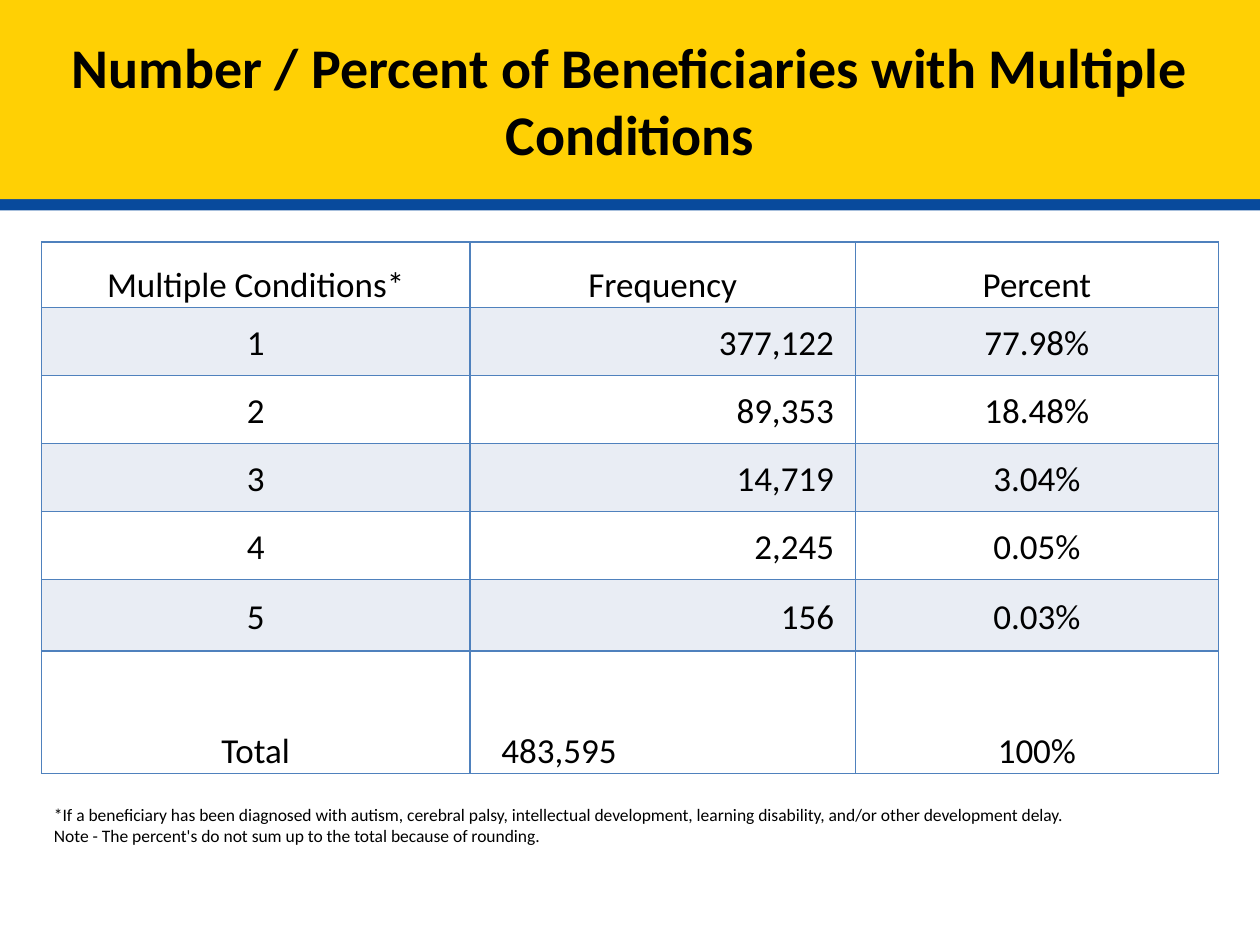
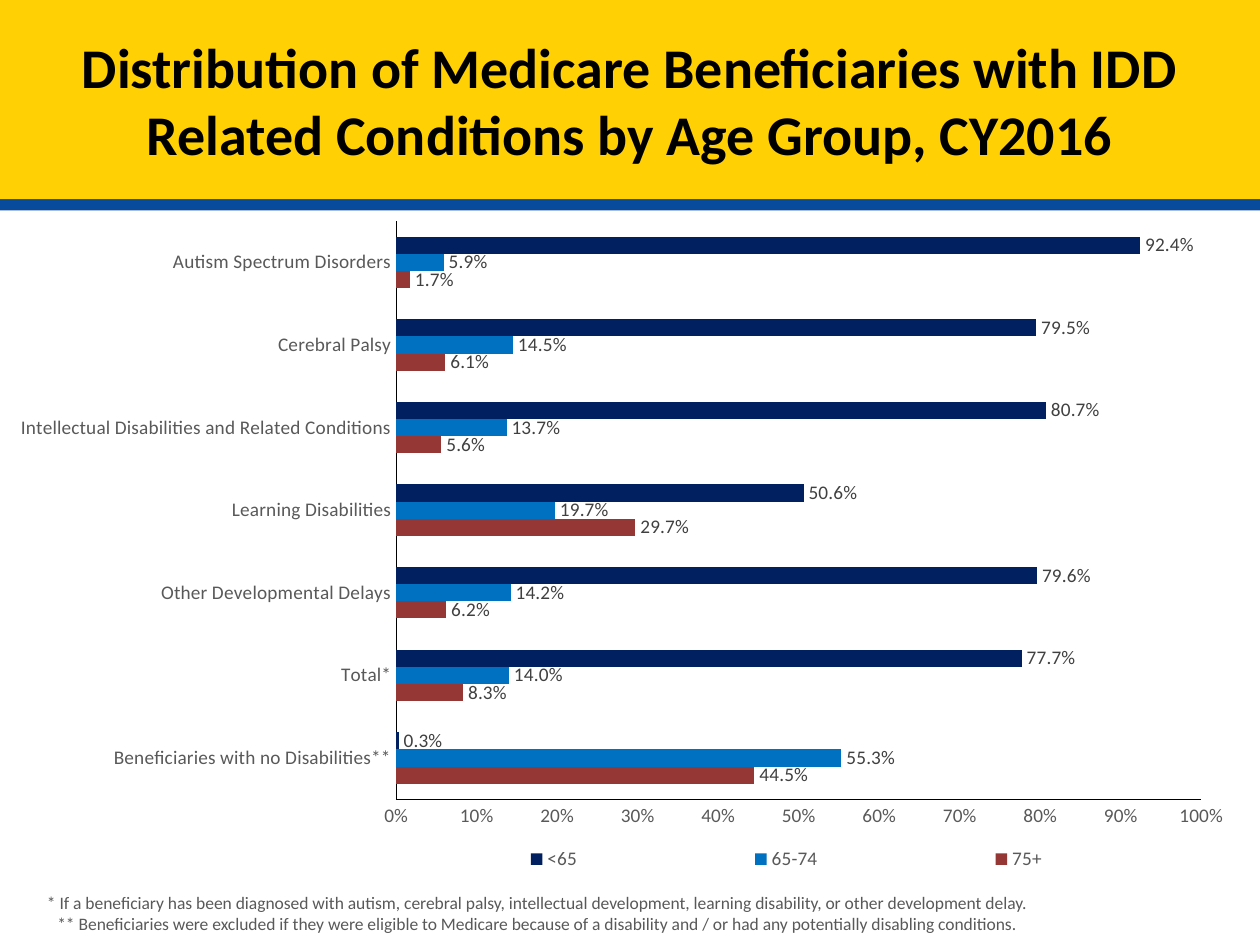
import pptx
import pptx.chart.data
import pptx.dml.color
import pptx.enum.chart
import pptx.enum.shapes
import pptx.enum.text
import pptx.oxml
import pptx.oxml.ns
import pptx.util

Inches, Pt = pptx.util.Inches, pptx.util.Pt
RGBColor = pptx.dml.color.RGBColor
PP_ALIGN = pptx.enum.text.PP_ALIGN
MSO_ANCHOR = pptx.enum.text.MSO_ANCHOR

FONT = "Calibri"
BLACK = RGBColor(0x00, 0x00, 0x00)
WHITE = RGBColor(0xFF, 0xFF, 0xFF)
GOLD = RGBColor(0xFF, 0xD0, 0x04)
BLUE = RGBColor(0x08, 0x4A, 0x9C)
BORDER = RGBColor(0x4F, 0x81, 0xBD)
STRIPE = RGBColor(0xE9, 0xED, 0xF4)
GREY = RGBColor(0x59, 0x59, 0x59)
LABEL_GREY = RGBColor(0x40, 0x40, 0x40)
NAVY = RGBColor(0x00, 0x20, 0x60)
SKY = RGBColor(0x00, 0x70, 0xC0)
MAROON = RGBColor(0x95, 0x37, 0x35)

SLIDE_W, SLIDE_H = 10, 7.5
TITLE_H, STRIP_H = 1.58, 0.09

TABLE_COLS = [3.4, 3.06, 2.88]
TABLE_ROWS = [0.52, 0.54, 0.54, 0.54, 0.54, 0.57, 0.97]
CONDITIONS = [
    ("Multiple Conditions*", "Frequency", "Percent"),
    ("1", "377,122", "77.98%"),
    ("2", "89,353", "18.48%"),
    ("3", "14,719", "3.04%"),
    ("4", "2,245", "0.05%"),
    ("5", "156", "0.03%"),
    ("Total", "483,595", "100%"),
]

# Categories run from the bottom of the chart to the top
CATEGORIES = [
    "Beneficiaries with no Disabilities**", "Total*",
    "Other Developmental Delays", "Learning Disabilities",
    "Intellectual Disabilities and Related Conditions",
    "Cerebral Palsy", "Autism Spectrum Disorders",
]
AGE_GROUPS = [
    ("75+", MAROON, (0.445, 0.083, 0.062, 0.297, 0.056, 0.061, 0.017)),
    ("65-74", SKY, (0.553, 0.14, 0.142, 0.197, 0.137, 0.145, 0.059)),
    ("<65", NAVY, (0.003, 0.777, 0.796, 0.506, 0.807, 0.795, 0.924)),
]


def style_font(font, size, color, bold=False):
    font.name, font.size, font.bold = FONT, Pt(size), bold
    font.color.rgb = color


def add_run(p, text, size, color, bold=False):
    r = p.add_run()
    r.text = text
    style_font(r.font, size, color, bold)


def add_band(slide, top, height, color):
    sp = slide.shapes.add_shape(
        pptx.enum.shapes.MSO_SHAPE.RECTANGLE,
        0, Inches(top), Inches(SLIDE_W), Inches(height))
    sp.shadow.inherit = False
    sp.fill.solid()
    sp.fill.fore_color.rgb = color
    sp.line.fill.background()
    return sp


def add_title(slide, text):
    add_band(slide, TITLE_H, STRIP_H, BLUE)
    tf = add_band(slide, 0, TITLE_H, GOLD).text_frame
    tf.word_wrap = True
    tf.vertical_anchor = MSO_ANCHOR.MIDDLE
    p = tf.paragraphs[0]
    p.alignment = PP_ALIGN.CENTER
    add_run(p, text, 32, BLACK, True)


def add_footnotes(slide, box, lines, color, align=PP_ALIGN.LEFT):
    tf = slide.shapes.add_textbox(*map(Inches, box)).text_frame
    tf.word_wrap = True
    for i, line in enumerate(lines):
        p = tf.add_paragraph() if i else tf.paragraphs[0]
        p.alignment = align
        add_run(p, line, 10, color)


def add_cell_borders(cell):
    tcPr = cell._tc.get_or_add_tcPr()
    for side in ("lnL", "lnR", "lnT", "lnB"):
        tcPr.append(pptx.oxml.parse_xml(
            f'<a:{side} {pptx.oxml.ns.nsdecls("a")} w="12700"><a:solidFill>'
            f'<a:srgbClr val="{BORDER}"/></a:solidFill></a:{side}>'))


def add_conditions_table(slide, box):
    last = len(CONDITIONS) - 1
    table = slide.shapes.add_table(
        len(TABLE_ROWS), len(TABLE_COLS), *map(Inches, box)).table
    table.first_row = table.horz_banding = False
    for column, width in zip(table.columns, TABLE_COLS):
        column.width = Inches(width)
    for row, height in zip(table.rows, TABLE_ROWS):
        row.height = Inches(height)

    for i, values in enumerate(CONDITIONS):
        for j, value in enumerate(values):
            cell = table.cell(i, j)
            cell.margin_left = cell.margin_right = cell.margin_top = Inches(0.01)
            cell.margin_bottom = 0
            cell.vertical_anchor = (
                MSO_ANCHOR.BOTTOM if i in (0, last) else MSO_ANCHOR.MIDDLE)
            add_cell_borders(cell)
            cell.fill.solid()
            cell.fill.fore_color.rgb = STRIPE if i % 2 and i < last else WHITE
            p = cell.text_frame.paragraphs[0]
            p.alignment, p.line_spacing = PP_ALIGN.CENTER, 1.07
            # Frequencies line up right, their total sits at the left
            if j == 1 and i == last:
                p.alignment, cell.margin_left = PP_ALIGN.LEFT, Inches(0.25)
            elif j == 1 and i:
                p.alignment, cell.margin_right = PP_ALIGN.RIGHT, Inches(0.17)
            add_run(p, value, 20, BLACK)


def set_layout(parent, x, y, w, h, inner=False):
    """Return a manual chart layout, given as fractions of the chart."""
    target = '<c:layoutTarget val="inner"/>' if inner else ""
    sizes = "".join(f'<c:{k} val="{v}"/>'
                    for k, v in zip("xywh", (x, y, w, h)))
    for old in parent.findall(pptx.oxml.ns.qn("c:layout")):
        parent.remove(old)
    layout = pptx.oxml.parse_xml(
        f'<c:layout {pptx.oxml.ns.nsdecls("c")}><c:manualLayout>{target}'
        f'<c:xMode val="edge"/><c:yMode val="edge"/>{sizes}'
        '</c:manualLayout></c:layout>')
    # A legend keeps its position first, a plot area starts with its layout
    parent.insert(0 if inner else 1, layout)


def style_axis(axis):
    axis.has_major_gridlines = False
    axis.major_tick_mark = axis.minor_tick_mark = (
        pptx.enum.chart.XL_TICK_MARK.NONE)
    style_font(axis.tick_labels.font, 11, GREY)
    axis.format.line.color.rgb = BLACK
    axis.format.line.width = Pt(0.75)


def add_age_chart(slide, box):
    data = pptx.chart.data.CategoryChartData(number_format="0.0%")
    data.categories = CATEGORIES
    for name, _, values in AGE_GROUPS:
        data.add_series(name, values)
    chart = slide.shapes.add_chart(
        pptx.enum.chart.XL_CHART_TYPE.BAR_CLUSTERED,
        *map(Inches, box), data).chart
    chart.has_title = False
    style_font(chart.font, 11, BLACK)

    # Bars and their labels
    plot = chart.plots[0]
    plot.gap_width, plot.overlap = 182, 0
    plot.vary_by_categories = False
    for series, (_, color, _) in zip(plot.series, AGE_GROUPS):
        series.format.fill.solid()
        series.format.fill.fore_color.rgb = color
        labels = series.data_labels
        labels.show_value = True
        labels.position = pptx.enum.chart.XL_LABEL_POSITION.OUTSIDE_END
        labels.number_format, labels.number_format_is_linked = "0.0%", False
        style_font(labels.font, 11, LABEL_GREY)

    # Axes
    style_axis(chart.category_axis)
    axis = chart.value_axis
    style_axis(axis)
    axis.minimum_scale, axis.maximum_scale, axis.major_unit = 0, 1, 0.1
    axis.tick_labels.number_format = "0%"
    axis.tick_labels.number_format_is_linked = False

    # Legend and plot area
    chart.has_legend = True
    legend = chart.legend
    legend.position = pptx.enum.chart.XL_LEGEND_POSITION.BOTTOM
    legend.include_in_layout = False
    style_font(legend.font, 11, GREY)
    set_layout(legend._element, 0.29, 0.93, 0.69, 0.06)
    set_layout(chart._chartSpace.chart.plotArea, 0.32, 0, 0.65, 0.87, True)


def build_conditions_slide(slide):
    add_title(slide, "Number / Percent of Beneficiaries with Multiple Conditions")
    add_conditions_table(
        slide, (0.33, 1.92, sum(TABLE_COLS), sum(TABLE_ROWS)))
    add_footnotes(slide, (0.33, 6.33, 9.42, 0.44), [
        "*If a beneficiary has been diagnosed with autism, cerebral palsy, "
        "intellectual development, learning disability, and/or other "
        "development delay.",
        "Note - The percent's do not sum up to the total because of rounding.",
    ], BLACK)


def build_age_slide(slide):
    add_title(slide, "Distribution of Medicare Beneficiaries with IDD Related "
                     "Conditions by Age Group, CY2016")
    add_footnotes(slide, (0.16, 7.03, 8.2, 0.44), [
        "* If a beneficiary has been diagnosed with autism, cerebral palsy, "
        "intellectual development, learning disability, or other "
        "development delay.",
        "** Beneficiaries were excluded if they were eligible to Medicare "
        "because of a disability and / or had any potentially disabling "
        "conditions.",
    ], GREY, PP_ALIGN.CENTER)
    add_age_chart(slide, (0, 1.75, 9.83, 5.28))


def main():
    prs = pptx.Presentation()
    prs.slide_width, prs.slide_height = Inches(SLIDE_W), Inches(SLIDE_H)
    for build in (build_conditions_slide, build_age_slide):
        build(prs.slides.add_slide(prs.slide_layouts[6]))
    prs.save("out.pptx")


if __name__ == "__main__":
    main()
